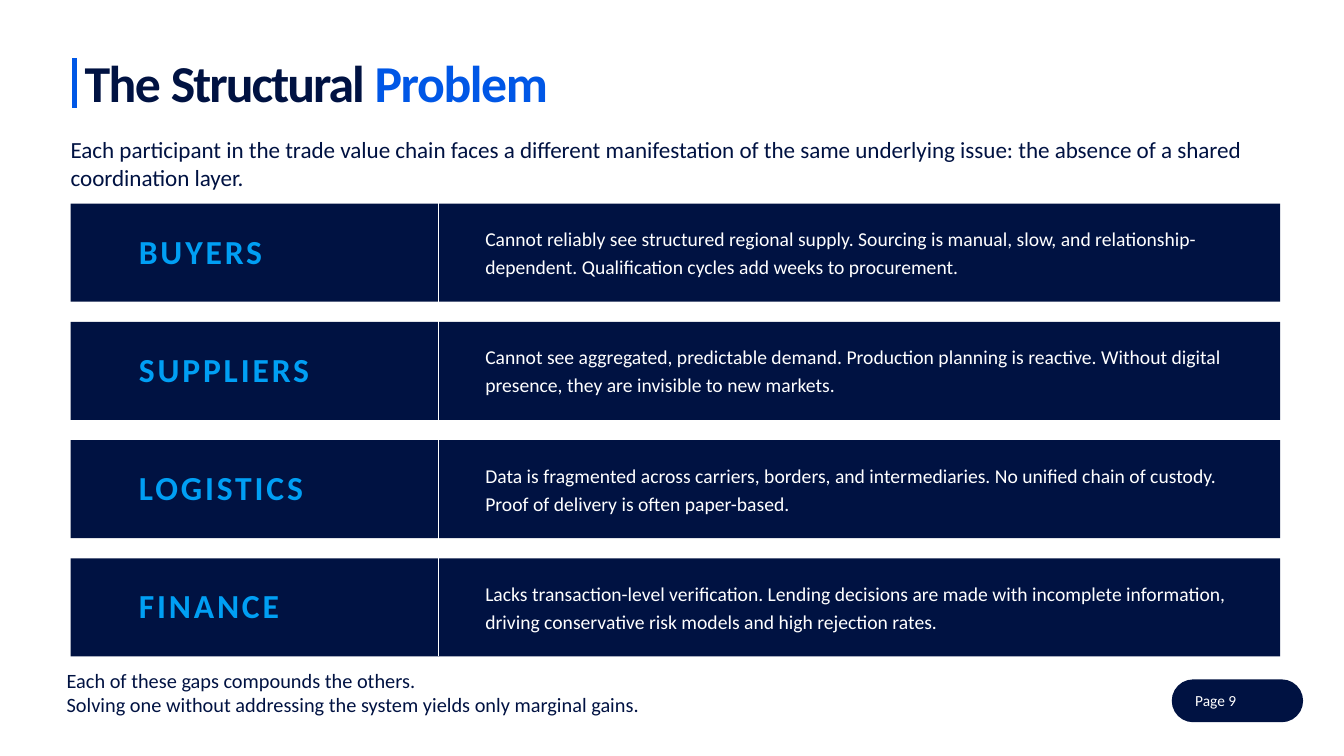
"""Build the slide on the structural problem of the trade value chain."""
from dataclasses import dataclass

from lxml.etree import SubElement
from pptx import Presentation
from pptx.dml.color import RGBColor
from pptx.enum.shapes import MSO_CONNECTOR, MSO_SHAPE
from pptx.enum.text import MSO_ANCHOR, MSO_AUTO_SIZE, PP_ALIGN
from pptx.oxml.ns import qn
from pptx.slide import Slide
from pptx.text.text import TextFrame
from pptx.util import Cm, Pt

NAVY = RGBColor(0x00, 0x12, 0x42)
BLUE = RGBColor(0x00, 0x57, 0xE6)
SKY = RGBColor(0x00, 0x9F, 0xF4)
WHITE = RGBColor(0xFF, 0xFF, 0xFF)
FACE = "Calibri"
TOP, STEP, HIGH = 5.13, 2.98, 2.47


@dataclass(frozen=True)
class Box:
    left: float
    top: float
    width: float
    height: float

    def place(self) -> tuple[Cm, Cm, Cm, Cm]:
        return Cm(self.left), Cm(self.top), Cm(self.width), Cm(self.height)


@dataclass(frozen=True)
class Style:
    size: float
    color: RGBColor
    bold: bool = False
    track: int = 0
    lead: float = 1.0


@dataclass(frozen=True)
class Row:
    label: str
    detail: str


@dataclass(frozen=True)
class Part:
    text: str
    color: RGBColor
    track: int


INTRO = Style(16.5, NAVY, lead=1.01)
LABEL = Style(24, SKY, bold=True, track=205)
DETAIL = Style(14, WHITE, lead=1.2)
CLOSE = Style(14.5, NAVY)
PAGE = Style(11, WHITE)

ROWS = (
    Row("BUYERS", "Cannot reliably see structured regional supply. Sourcing is manual, slow, and "
        "relationship-dependent. Qualification cycles add weeks to procurement."),
    Row("SUPPLIERS", "Cannot see aggregated, predictable demand. Production planning is reactive. "
        "Without digital presence, they are invisible to new markets."),
    Row("LOGISTICS", "Data is fragmented across carriers, borders, and intermediaries. No unified "
        "chain of custody.\nProof of delivery is often paper-based."),
    Row("FINANCE", "Lacks transaction-level verification. Lending decisions are made with "
        "incomplete information, driving conservative risk models and high rejection rates."),
)
TITLE = (
    Part("The ", NAVY, -110),
    Part("Structural ", NAVY, -140),
    Part("Problem", BLUE, -100),
)


def reset(frame: TextFrame) -> None:
    frame.word_wrap = True
    frame.auto_size = MSO_AUTO_SIZE.NONE
    frame.vertical_anchor = MSO_ANCHOR.TOP
    frame.margin_left = frame.margin_right = frame.margin_bottom = 0
    frame.margin_top = Cm(0.04)


def write(slide: Slide, box: Box, text: str, style: Style) -> None:
    frame = slide.shapes.add_textbox(*box.place()).text_frame
    reset(frame)
    frame.text = text
    for para in frame.paragraphs:
        para.line_spacing = style.lead
        font = para.font
        font.name, font.size, font.bold = FACE, Pt(style.size), style.bold
        font.color.rgb = style.color
        if style.track:
            for run in para.runs:
                run._r.get_or_add_rPr().set("spc", str(style.track))


def block(slide: Slide, kind: MSO_SHAPE, box: Box) -> None:
    shape = slide.shapes.add_shape(kind, *box.place())
    shape.shadow.inherit = False
    shape.fill.solid()
    shape.fill.fore_color.rgb = NAVY
    shape.line.fill.background()
    if kind == MSO_SHAPE.ROUNDED_RECTANGLE:
        shape.adjustments[0] = 0.5


def rule(slide: Slide, left: float, top: float, end: float, color: RGBColor, width: float) -> None:
    line = slide.shapes.add_connector(MSO_CONNECTOR.STRAIGHT, Cm(left), Cm(top), Cm(left), Cm(end))
    line.line.color.rgb = color
    line.line.width = Pt(width)
    SubElement(line._element.spPr, qn("a:effectLst"))


def head(slide: Slide) -> None:
    title = slide.shapes.title
    title.left, title.top, title.width, title.height = Box(2.13, 1.24, 29.6, 1.65).place()
    reset(title.text_frame)
    para = title.text_frame.paragraphs[0]
    para.alignment = PP_ALIGN.LEFT
    para.font.name, para.font.size, para.font.bold = FACE, Pt(37), True
    for part in TITLE:
        run = para.add_run()
        run.text = part.text
        run.font.color.rgb = part.color
        run._r.get_or_add_rPr().set("spc", str(part.track))


def main() -> None:
    deck = Presentation()
    deck.slide_width, deck.slide_height = Cm(33.87), Cm(19.05)
    slide = deck.slides.add_slide(deck.slide_layouts[5])
    head(slide)
    rule(slide, 1.88, 1.47, 2.72, BLUE, 3)
    write(slide, Box(1.78, 3.36, 29.97, 1.47), INTRO_TEXT, INTRO)
    for num, row in enumerate(ROWS):
        top = TOP + num * STEP
        block(slide, MSO_SHAPE.RECTANGLE, Box(1.78, top, 30.48, HIGH))
        write(slide, Box(3.5, top + 0.64, 4.6, 1.09), row.label, LABEL)
        write(slide, Box(12.23, top + 0.43, 18.7, 1.5), row.detail, DETAIL)
    rule(slide, 11.05, 4.9, 16.54, WHITE, 0.5)
    write(slide, Box(1.68, 16.8, 14.66, 1.32), CLOSE_TEXT, CLOSE)
    block(slide, MSO_SHAPE.ROUNDED_RECTANGLE, Box(29.53, 17.12, 3.31, 1.08))
    write(slide, Box(30.12, 17.38, 1.4, 0.53), "Page 9", PAGE)
    deck.save("out.pptx")


INTRO_TEXT = ("Each participant in the trade value chain faces a different manifestation of the "
              "same underlying issue: the absence of a shared coordination layer.")
CLOSE_TEXT = ("Each of these gaps compounds the others.\n"
              "Solving one without addressing the system yields only marginal gains.")

if __name__ == "__main__":
    main()
